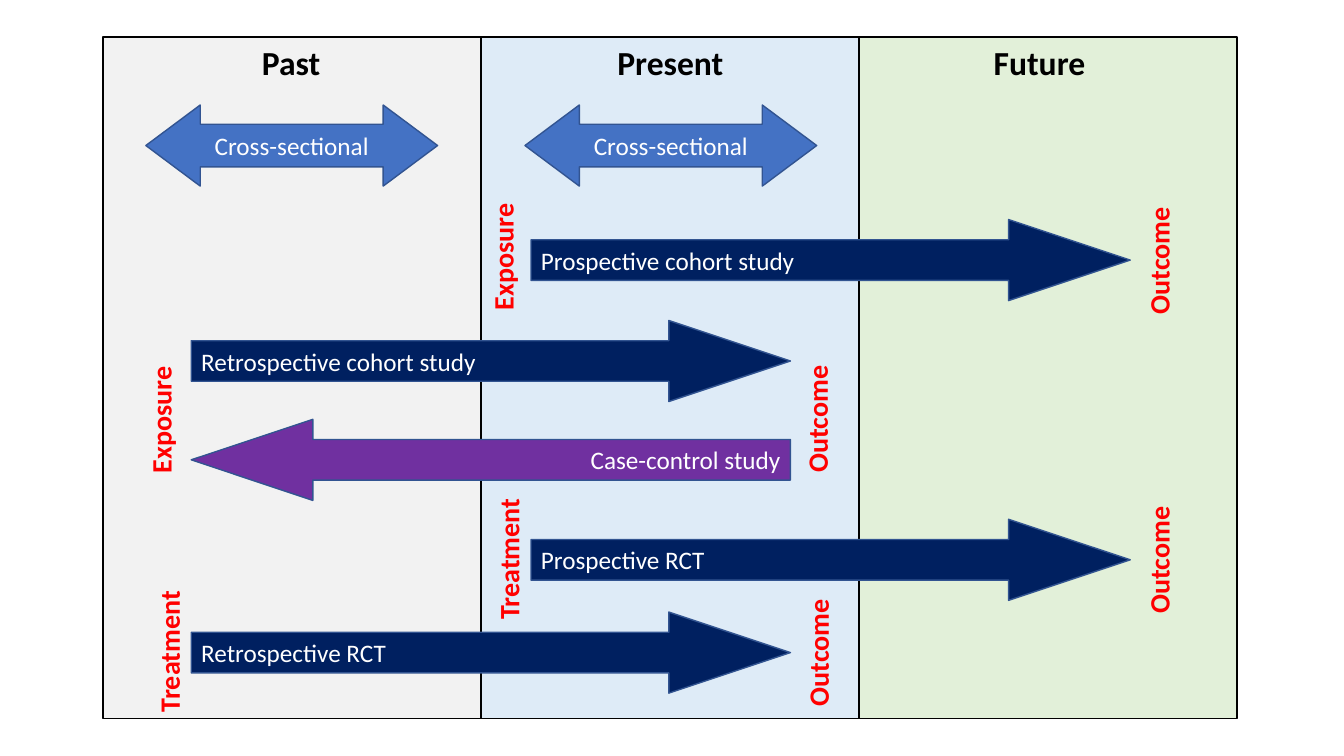
from dataclasses import dataclass

from pptx import Presentation
from pptx.dml.color import RGBColor
from pptx.enum import shapes, text
from pptx.util import Pt


@dataclass(frozen=True)
class Theme:
    font: str = "Calibri"
    heading_size: int = 24
    marker_size: int = 20
    study_size: int = 18
    ink: str = "000000"
    marker: str = "FF0000"
    on_arrow: str = "FFFFFF"
    arrow_edge: str = "325491"
    past: str = "F2F2F2"
    present: str = "DEEBF7"
    future: str = "E2F0D9"
    cross_sectional: str = "4472C4"
    forward: str = "002060"
    backward: str = "7030A0"


class StudyTimeline:
    PERIOD_LEFT, PERIOD_TOP, PERIOD_WIDTH, PERIOD_HEIGHT = 73.5, 26.6, 270, 486.7
    ARROW_HEIGHT = 57.9

    def __init__(self, slide, theme):
        self.slide = slide
        self.theme = theme

    def _shape(self, preset, left, top, width, height, fill, edge):
        shape = self.slide.shapes.add_shape(
            preset, Pt(left), Pt(top), Pt(width), Pt(height))
        shape.shadow.inherit = False
        shape.fill.solid()
        shape.fill.fore_color.rgb = RGBColor.from_string(fill)
        shape.line.color.rgb = RGBColor.from_string(edge)
        shape.line.width = Pt(1)
        return shape

    def _write(self, frame, words, size, color, align, bold=False):
        paragraph = frame.paragraphs[0]
        paragraph.text = words
        paragraph.alignment = align
        paragraph.font.name = self.theme.font
        paragraph.font.size = Pt(size)
        paragraph.font.bold = bold
        paragraph.font.color.rgb = RGBColor.from_string(color)

    def _label(self, words, center_x, center_y, width, height, size, color):
        box = self.slide.shapes.add_textbox(
            Pt(center_x - width / 2), Pt(center_y - height / 2), Pt(width), Pt(height))
        box.text_frame.word_wrap = False
        box.text_frame.auto_size = text.MSO_AUTO_SIZE.SHAPE_TO_FIT_TEXT
        self._write(box.text_frame, words, size, color, text.PP_ALIGN.LEFT, bold=True)
        return box

    def period(self, index, fill):
        self._shape(shapes.MSO_SHAPE.RECTANGLE,
                    self.PERIOD_LEFT + index * self.PERIOD_WIDTH, self.PERIOD_TOP,
                    self.PERIOD_WIDTH, self.PERIOD_HEIGHT, fill, self.theme.ink)

    def heading(self, words, center_x, width):
        height = 36.4
        self._label(words, center_x, self.PERIOD_TOP + height / 2, width, height,
                    self.theme.heading_size, self.theme.ink)

    def marker(self, words, center_x, center_y):
        """Add an upright label that reads from bottom to top."""
        width = 101.5 if words == "Treatment" else 91.4
        box = self._label(words, center_x, center_y, width, 31.5,
                          self.theme.marker_size, self.theme.marker)
        box.rotation = 270

    def _arrow(self, preset, words, left, top, width, fill, adjustments, align):
        arrow = self._shape(preset, left, top, width, self.ARROW_HEIGHT,
                            fill, self.theme.arrow_edge)
        for index, value in enumerate(adjustments):
            arrow.adjustments[index] = value
        arrow.text_frame.vertical_anchor = text.MSO_ANCHOR.MIDDLE
        self._write(arrow.text_frame, words, self.theme.study_size,
                    self.theme.on_arrow, align)
        return arrow

    def cross_sectional(self, left):
        self._arrow(shapes.MSO_SHAPE.LEFT_RIGHT_ARROW, "Cross-sectional", left, 75,
                    208.4, self.theme.cross_sectional, (0.526, 0.671),
                    text.PP_ALIGN.CENTER)

    def study(self, words, left, top, backward=False):
        fill = self.theme.backward if backward else self.theme.forward
        align = text.PP_ALIGN.RIGHT if backward else text.PP_ALIGN.LEFT
        arrow = self._arrow(shapes.MSO_SHAPE.RIGHT_ARROW, words, left, top, 428,
                            fill, (0.5, 1.5), align)
        if backward:
            arrow._element.spPr.xfrm.set("flipH", "1")


def main():
    deck = Presentation()
    deck.slide_width, deck.slide_height = Pt(960), Pt(540)
    theme = Theme()
    timeline = StudyTimeline(deck.slides.add_slide(deck.slide_layouts[6]), theme)

    for index, fill in enumerate((theme.past, theme.present, theme.future)):
        timeline.period(index, fill)
    for words, center_x, width in (("Past", 208.5, 57), ("Present", 479.6, 91.4),
                                   ("Future", 743, 80.6)):
        timeline.heading(words, center_x, width)

    for left in (104.2, 375):
        timeline.cross_sectional(left)

    from_past, from_present = 136.6, 379.3
    timeline.study("Prospective cohort study", from_present, 156.8)
    timeline.study("Retrospective cohort study", from_past, 228.9)
    timeline.study("Case-control study", from_past, 299.5, backward=True)
    timeline.study("Prospective RCT", from_present, 370.9)
    timeline.study("Retrospective RCT", from_past, 437.2)

    for words, center_x, center_y in (
            ("Exposure", 359, 183), ("Outcome", 827.6, 185.8),
            ("Exposure", 114.8, 299.4), ("Outcome", 583.6, 299),
            ("Treatment", 363.2, 399), ("Outcome", 827.6, 399.8),
            ("Treatment", 120.6, 465), ("Outcome", 584.3, 465.9)):
        timeline.marker(words, center_x, center_y)

    deck.save("out.pptx")


if __name__ == "__main__":
    main()
